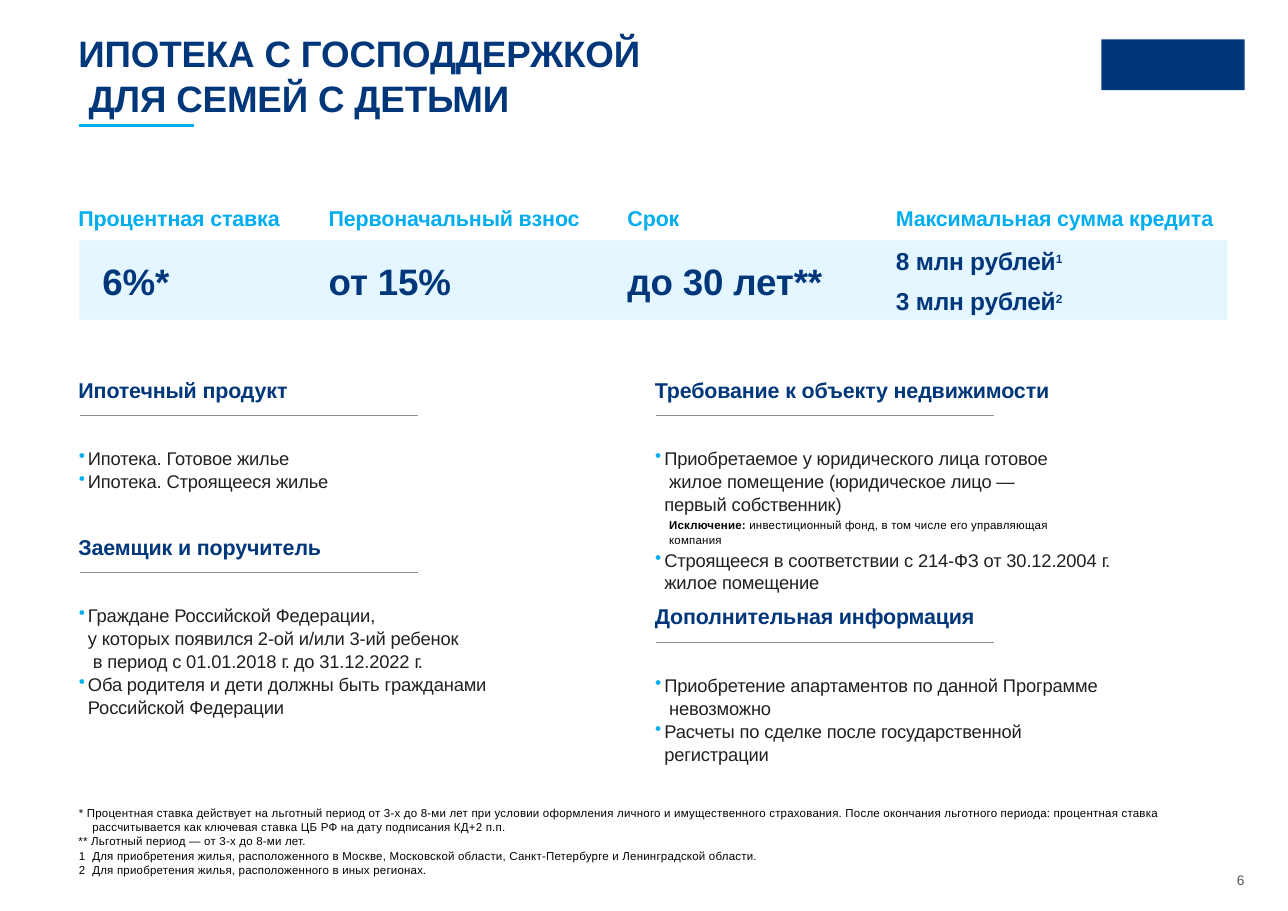
from dataclasses import dataclass
from typing import Any, NamedTuple

from lxml import etree
from pptx import Presentation
from pptx import util as u
from pptx.dml.color import RGBColor
from pptx.enum import shapes, text
from pptx.oxml import ns


@dataclass(frozen=True)
class Theme:
    font: str = "Arial"
    navy: str = "00377B"
    sky: str = "00AEEF"
    pale: str = "E4F6FF"
    ink: str = "231F20"
    black: str = "000000"
    grey: str = "8D8F8E"
    dim: str = "58595B"
    big: float = 24
    mid: float = 16
    sup: float = 13.5
    head: float = 14
    body: float = 12
    page: float = 9
    note: float = 7.5


THEME = Theme()


class Style(NamedTuple):
    size: float
    color: str
    bold: bool = False
    gap: float = -0.1


BIG = Style(THEME.big, THEME.navy, True)
MID = Style(THEME.mid, THEME.navy, True)
SUP = Style(THEME.sup, THEME.navy, True, -0.2)
HEAD = Style(THEME.head, THEME.navy, True)
LABEL = Style(THEME.head, THEME.sky, True)
BODY = Style(THEME.body, THEME.ink)
TIGHT = Style(THEME.body, THEME.ink, gap=-0.8)
NOTE = Style(THEME.note, THEME.black, gap=0.1)
BOLD = Style(THEME.note, THEME.black, True, 0.1)
PAGE = Style(THEME.page, THEME.dim, gap=0)


class Run(NamedTuple):
    words: str
    style: Style


class Para(NamedTuple):
    runs: list[Run]
    left: float = 0
    hang: float = 0
    mark: str = ""
    before: float = 0


class Fact(NamedTuple):
    x: float
    label: str
    shift: float
    top: float
    paras: list[Para]


class Block(NamedTuple):
    x: float
    y: float
    title: str
    paras: list[Para]


def line(words: str, style: Style, **kind: Any) -> Para:
    return Para([Run(words, style)], **kind)


def point(*runs: Run, before: float = 0) -> Para:
    return Para(list(runs), 0.22, -0.21, "•", before)


def item(words: str) -> Para:
    return point(Run(words, BODY))


def sum_line(words: str, sign: str, before: float) -> Para:
    return Para([Run(words, MID), Run(sign, SUP)], before=before)


def add_run(para: Any, run: Run) -> None:
    for n, part in enumerate(run.words.split("\n")):
        if n:
            para.add_line_break()
        bit = para.add_run()
        bit.text = part
        bit.font.name = THEME.font
        bit.font.size = u.Pt(run.style.size)
        bit.font.bold = run.style.bold
        bit.font.color.rgb = RGBColor.from_string(run.style.color)
        props = bit._r.get_or_add_rPr()
        props.set("spc", str(round(run.style.gap * 100)))
        if run.style is SUP:
            props.set("baseline", "34000")


def add_mark(props: Any, mark: str) -> None:
    if mark == "•":
        tint = etree.SubElement(props, ns.qn("a:buClr"))
        etree.SubElement(tint, ns.qn("a:srgbClr"), val=THEME.sky)
        etree.SubElement(props, ns.qn("a:buChar"), char=mark)
    elif mark:
        etree.SubElement(props, ns.qn("a:buAutoNum"), type=mark)


def fill_text(frame: Any, paras: list[Para]) -> None:
    frame.word_wrap = True
    frame.auto_size = text.MSO_AUTO_SIZE.NONE
    frame.vertical_anchor = text.MSO_ANCHOR.TOP
    frame.margin_left = frame.margin_right = 0
    frame.margin_top = frame.margin_bottom = 0
    for n, data in enumerate(paras):
        para = frame.add_paragraph() if n else frame.paragraphs[0]
        para.alignment = text.PP_ALIGN.LEFT
        para.line_spacing = 1.04
        para.space_before = u.Pt(data.before if n else 1)
        props = para._p.get_or_add_pPr()
        props.set("marL", str(u.Cm(data.left)))
        props.set("indent", str(u.Cm(data.hang)))
        add_mark(props, data.mark)
        for run in data.runs:
            add_run(para, run)


def add_text(slide: Any, x: float, y: float, w: float, h: float, paras: list[Para]) -> None:
    box = slide.shapes.add_textbox(u.Cm(x), u.Cm(y), u.Cm(w), u.Cm(h))
    fill_text(box.text_frame, paras)


def add_rule(slide: Any, x: float, y: float, w: float, color: str, width: float) -> None:
    rule = slide.shapes.add_connector(
        shapes.MSO_CONNECTOR.STRAIGHT, u.Cm(x), u.Cm(y), u.Cm(x + w), u.Cm(y))
    rule.line.color.rgb = RGBColor.from_string(color)
    rule.line.width = u.Pt(width)
    etree.SubElement(rule._element.spPr, ns.qn("a:effectLst"))


def add_rect(slide: Any, x: float, y: float, w: float, h: float, color: str) -> None:
    rect = slide.shapes.add_shape(
        shapes.MSO_SHAPE.RECTANGLE, u.Cm(x), u.Cm(y), u.Cm(w), u.Cm(h))
    rect.shadow.inherit = False
    rect.fill.solid()
    rect.fill.fore_color.rgb = RGBColor.from_string(color)
    rect.line.fill.background()


def add_title(slide: Any) -> None:
    title = slide.shapes.title
    title.left, title.top = u.Cm(1.81), u.Cm(0.66)
    title.width, title.height = u.Cm(16), u.Cm(2.08)
    fill_text(title.text_frame, [line("ИПОТЕКА С ГОСПОДДЕРЖКОЙ\n ДЛЯ СЕМЕЙ С ДЕТЬМИ", BIG)])
    add_rule(slide, 1.83, 2.9, 2.64, THEME.sky, 2)


def add_fact(slide: Any, fact: Fact) -> None:
    add_text(slide, fact.x, 4.7, 8.2, 0.64, [line(fact.label, LABEL)])
    add_text(slide, fact.x + fact.shift, fact.top, 6, 1.5, fact.paras)


def add_block(slide: Any, block: Block) -> None:
    add_text(slide, block.x, block.y, 11.5, 0.64, [line(block.title, HEAD)])
    add_rule(slide, block.x + 0.03, block.y + 0.92, 7.79, THEME.grey, 1)
    add_text(slide, block.x, block.y + 1.63, 12, 0.52 * len(block.paras), block.paras)


FACTS = [
    Fact(1.81, "Процентная ставка", 0.55, 5.92, [line("6%*", BIG)]),
    Fact(7.58, "Первоначальный взнос", 0, 5.92, [line("от 15%", BIG)]),
    Fact(14.47, "Срок", 0, 5.92, [line("до 30 лет**", BIG)]),
    Fact(20.66, "Максимальная сумма кредита", 0, 5.65,
         [sum_line("8 млн рублей", "1", 1), sum_line("3 млн рублей", "2", 6)]),
]

BLOCKS = [
    Block(1.81, 8.66, "Ипотечный продукт",
          [item("Ипотека. Готовое жилье"), item("Ипотека. Строящееся жилье")]),
    Block(1.81, 12.28, "Заемщик и поручитель", [
        item("Граждане Российской Федерации,"),
        Para([Run("у которых появился 2-ой и/или 3-ий ребенок\n в период с 01.01.2018 ", BODY),
              Run("г. ", TIGHT), Run("до 31.12.2022 ", BODY), Run("г.", TIGHT)], 0.22),
        item("Оба родителя и дети должны быть гражданами\nРоссийской Федерации")]),
    Block(15.1, 8.66, "Требование к объекту недвижимости", [
        item("Приобретаемое у юридического лица готовое\n жилое помещение "
             "(юридическое лицо —\nпервый собственник)"),
        Para([Run("Исключение: ", BOLD),
              Run("инвестиционный фонд, в том числе его управляющая\nкомпания", NOTE)],
             0.33, before=1.9),
        point(Run("Строящееся в соответствии с 214-ФЗ от 30.12.2004 ", BODY),
              Run("г.", TIGHT), Run("\nжилое помещение", BODY), before=0.8)]),
    Block(15.1, 13.89, "Дополнительная информация", [
        item("Приобретение апартаментов по данной Программе\n невозможно"),
        item("Расчеты по сделке после государственной\nрегистрации")]),
]

NOTES = [
    line("* Процентная ставка действует на льготный период от 3-х до 8-ми лет при условии "
         "оформления личного и имущественного страхования. После окончания льготного "
         "периода: процентная ставка\nрассчитывается как ключевая ставка ЦБ РФ на дату "
         "подписания КД+2 п.п.", NOTE, left=0.32, hang=-0.31),
    line("** Льготный период — от 3-х до 8-ми лет.", NOTE),
    *(line(f"Для приобретения жилья, расположенного в {place}", NOTE,
           left=0.32, hang=-0.31, mark="arabicPlain")
      for place in ("Москве, Московской области, Санкт-Петербурге и Ленинградской области.",
                    "иных регионах.")),
]


def main() -> None:
    deck = Presentation()
    deck.slide_width, deck.slide_height = u.Cm(29.7), u.Cm(21)
    slide = deck.slides.add_slide(deck.slide_layouts[5])
    add_title(slide)
    add_rect(slide, 25.4, 0.91, 3.3, 1.17, THEME.navy)
    add_rect(slide, 1.83, 5.54, 26.47, 1.83, THEME.pale)
    for fact in FACTS:
        add_fact(slide, fact)
    for block in BLOCKS:
        add_block(slide, block)
    add_text(slide, 1.81, 18.56, 26.5, 1.63, NOTES)
    add_text(slide, 28.52, 20.07, 0.5, 0.43, [line("6", PAGE)])
    deck.save("out.pptx")


if __name__ == "__main__":
    main()
